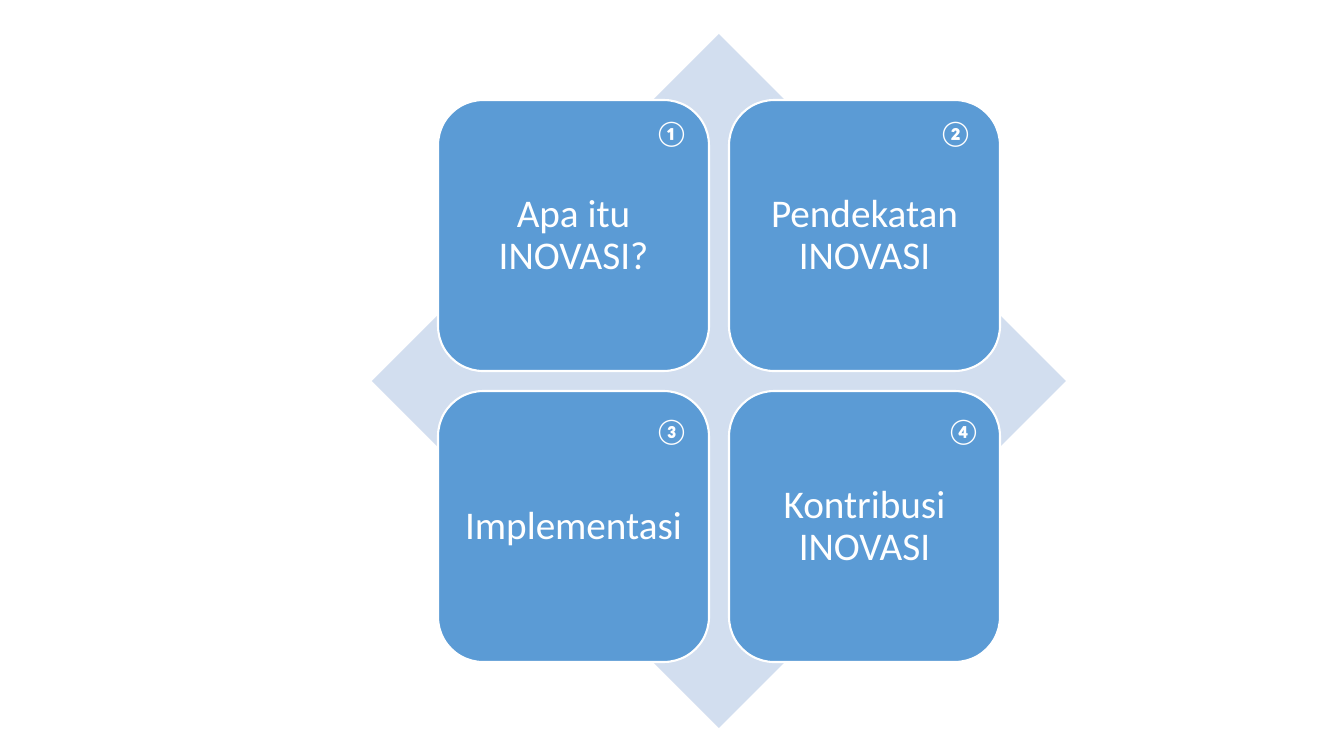
import pptx
import pptx.util
import pptx.dml.color
import pptx.enum.shapes
import pptx.enum.text

SHAPE = pptx.enum.shapes.MSO_SHAPE
ALIGN = pptx.enum.text.PP_ALIGN
ANCHOR = pptx.enum.text.MSO_ANCHOR
AUTO_SIZE = pptx.enum.text.MSO_AUTO_SIZE

# Topic, number and the number's left and top in px, row by row
TOPICS = [
    ("Apa itu INOVASI?", "①", 645, 112),
    ("Pendekatan INOVASI", "②", 929, 112),
    ("Implementasi", "③", 645, 410),
    ("Kontribusi INOVASI", "④", 937, 410),
]
WHITE, BLUE, PALE_BLUE = "FFFFFF", "5B9BD5", "D2DEEF"

SLIDE_SIZE = 1344, 756
DIAMOND_LEFT, DIAMOND_TOP, DIAMOND_SIZE = 372, 34, 694
TILE_SIZE, TILE_GAP = 271, 20
TILE_MARGIN = (DIAMOND_SIZE - 2 * TILE_SIZE - TILE_GAP) // 2
TILE_INSET = 12
NUMBER_SIZE = 54, 40


def px(length):
    return pptx.util.Emu(round(length * 914400 / 100.8))


def color(hex_string):
    return pptx.dml.color.RGBColor.from_string(hex_string)


def add_filled(slide, preset, left, top, size, fill, outline=None):
    shape = slide.shapes.add_shape(preset, px(left), px(top), px(size), px(size))
    shape.shadow.inherit = False
    shape.fill.solid()
    shape.fill.fore_color.rgb = color(fill)
    if outline:
        shape.line.color.rgb = color(outline)
        shape.line.width = pptx.util.Pt(1.5)
    else:
        shape.line.fill.background()
    return shape


def write(frame, text, size, bold=False, align=ALIGN.LEFT, spacing=1.0):
    paragraph = frame.paragraphs[0]
    paragraph.alignment = align
    paragraph.line_spacing = spacing
    run = paragraph.add_run()
    run.text = text
    run.font.name = "Calibri"
    run.font.size = pptx.util.Pt(size)
    run.font.bold = bold
    run.font.color.rgb = color(WHITE)


def add_tile(slide, index, topic):
    row, column = divmod(index, 2)
    step = TILE_SIZE + TILE_GAP
    tile = add_filled(slide, SHAPE.ROUNDED_RECTANGLE,
                      DIAMOND_LEFT + TILE_MARGIN + column * step,
                      DIAMOND_TOP + TILE_MARGIN + row * step,
                      TILE_SIZE, BLUE, outline=WHITE)
    frame = tile.text_frame
    frame.word_wrap = True
    frame.vertical_anchor = ANCHOR.MIDDLE
    frame.margin_left = frame.margin_right = px(TILE_INSET)
    frame.margin_top = frame.margin_bottom = px(TILE_INSET)
    write(frame, topic, 28, align=ALIGN.CENTER, spacing=0.9)


def add_number(slide, number, left, top):
    frame = slide.shapes.add_textbox(px(left), px(top), *map(px, NUMBER_SIZE)).text_frame
    frame.word_wrap = False
    frame.auto_size = AUTO_SIZE.SHAPE_TO_FIT_TEXT
    write(frame, number, 18, bold=True)


def main():
    deck = pptx.Presentation()
    deck.slide_width, deck.slide_height = map(px, SLIDE_SIZE)
    slide = deck.slides.add_slide(deck.slide_layouts[6])
    add_filled(slide, SHAPE.DIAMOND, DIAMOND_LEFT, DIAMOND_TOP, DIAMOND_SIZE, PALE_BLUE)
    for index, (topic, number, left, top) in enumerate(TOPICS):
        add_tile(slide, index, topic)
        add_number(slide, number, left, top)
    deck.save("out.pptx")


if __name__ == "__main__":
    main()
